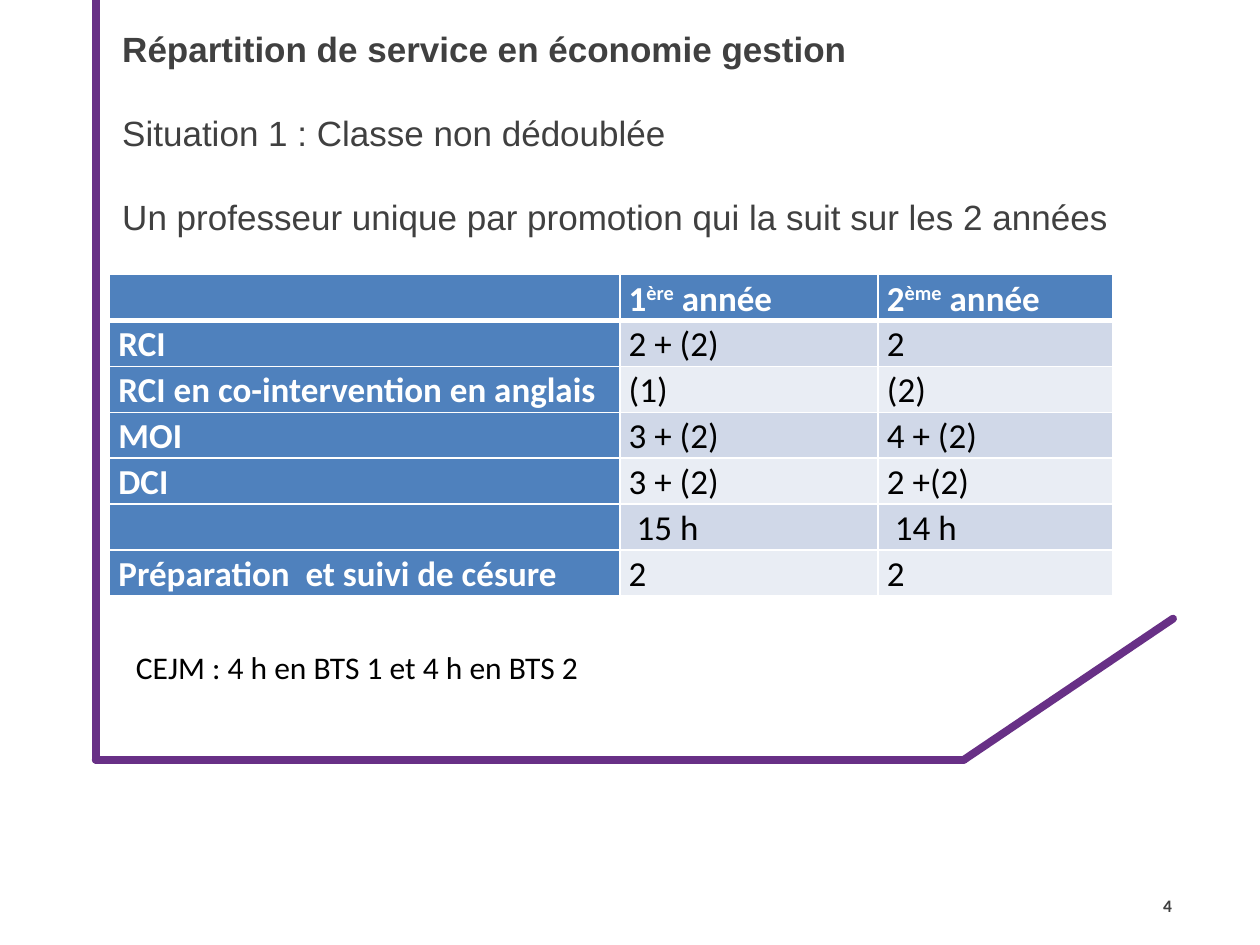
from lxml.etree import SubElement
from pptx import Presentation
from pptx.dml.color import RGBColor
from pptx.enum.shapes import MSO_CONNECTOR
from pptx.enum.text import MSO_ANCHOR as Anchor, PP_ALIGN as Align
from pptx.oxml.ns import qn
from pptx.util import Inches, Pt

TITLE = [
    "Répartition de service en économie gestion",
    "Situation 1 : Classe non dédoublée",
    "Un professeur unique par promotion qui la suit sur les 2 années",
]
HEADS = [("1", "ère", " année"), ("2", "ème", " année")]
HOURS = [
    ("RCI", "2 + (2)", "2"),
    ("RCI en co-intervention en anglais", "(1)", "(2)"),
    ("MOI", "3 + (2)", "4 + (2)"),
    ("DCI", "3 + (2)", "2 +(2)"),
    ("", " 15 h", " 14 h"),
    ("Préparation  et suivi de césure", "2", "2"),
]
NOTE = "CEJM : 4 h en BTS 1 et 4 h en BTS 2"
WIDTHS = [4.05, 2.05, 1.86]
ROW_H = 0.36
FRAME = [
    ((0.76, 6.03), (7.65, 6.03)),
    ((7.65, 6.03), (9.31, 4.91)),
    ((0.76, 6.03), (0.76, 0)),
]
PURPLE, BLUE, WHITE, BLACK, GREY = "683086", "4F81BD", "FFFFFF", "000000", "404040"
BANDS = ["D0D8E8", "E9EDF4"]


def rgb(code):
    return RGBColor.from_string(code)


def style(para, size, color, bold=False, name="Calibri"):
    font = para.font
    font.name, font.size, font.bold = name, Pt(size), bold
    font.color.rgb = rgb(color)


def add_line(start, end):
    line = slide.shapes.add_connector(
        MSO_CONNECTOR.STRAIGHT, *map(Inches, start + end))
    line.line.color.rgb = rgb(PURPLE)
    line.line.width = Pt(4.5)
    props = line._element.spPr
    props.find(qn("a:ln")).set("cap", "rnd")
    SubElement(props, qn("a:effectLst"))


def add_text(text, box, size, color, bold=False):
    frame = slide.shapes.add_textbox(*map(Inches, box)).text_frame
    frame.word_wrap = True
    para = frame.paragraphs[0]
    para.text = text
    style(para, size, color, bold)
    return frame


def edge(cell, side, width):
    """Draw one white border; call before the cell is filled."""
    line = SubElement(cell._tc.get_or_add_tcPr(), qn("a:" + side), w=str(Pt(width)))
    fill = SubElement(line, qn("a:solidFill"))
    SubElement(fill, qn("a:srgbClr"), val=WHITE)


def fill_cell(cell, parts, row, col):
    head = row == 0 or col == 0
    for side in ("lnL", "lnR", "lnT", "lnB"):
        thick = (row, side) in ((0, "lnB"), (1, "lnT"))
        edge(cell, side, 3 if thick else 1)
    cell.fill.solid()
    cell.fill.fore_color.rgb = rgb(BLUE if head else BANDS[(row - 1) % 2])
    cell.margin_left = cell.margin_right = Inches(0.07)
    cell.margin_top = cell.margin_bottom = 0
    para = cell.text_frame.paragraphs[0]
    para.line_spacing = 1.07
    style(para, 20, WHITE if head else BLACK, head)
    for i, part in enumerate(parts):
        run = para.add_run()
        run.text = part
        if i == 1:
            run._r.get_or_add_rPr().set("baseline", "30000")


prs = Presentation()
prs.slide_width, prs.slide_height = Inches(10), Inches(7.5)
slide = prs.slides.add_slide(prs.slide_layouts[5])

for start, end in FRAME:
    add_line(start, end)

title = slide.shapes.title
title.left, title.top, title.width, title.height = map(Inches, (0.87, -1.37, 8.5, 5.51))
frame = title.text_frame
frame.text = "\n".join(TITLE)
frame.word_wrap = True
frame.vertical_anchor = Anchor.MIDDLE
frame.margin_bottom = Inches(0.72)
for i, para in enumerate(frame.paragraphs):
    para.alignment = Align.LEFT
    para.line_spacing = Pt(24)
    para.space_before = Pt(24 if i else 0)
    style(para, 20, GREY, i == 0, "Arial")

rows = [[()] + HEADS] + [[(text,) if text else () for text in row] for row in HOURS]
table = slide.shapes.add_table(
    len(rows), len(WIDTHS), Inches(0.87), Inches(2.18),
    Inches(sum(WIDTHS)), Inches(ROW_H * len(rows))).table
for column, width in zip(table.columns, WIDTHS):
    column.width = Inches(width)
for r, row in enumerate(rows):
    for c, parts in enumerate(row):
        fill_cell(table.cell(r, c), parts, r, c)

add_text(NOTE, (0.98, 5.09, 4.41, 0.71), 18, BLACK)
number = add_text("4", (8.96, 6.99, 0.44, 0.4), 10, GREY, True)
number.vertical_anchor = Anchor.MIDDLE
number.paragraphs[0].alignment = Align.RIGHT

prs.save("out.pptx")
